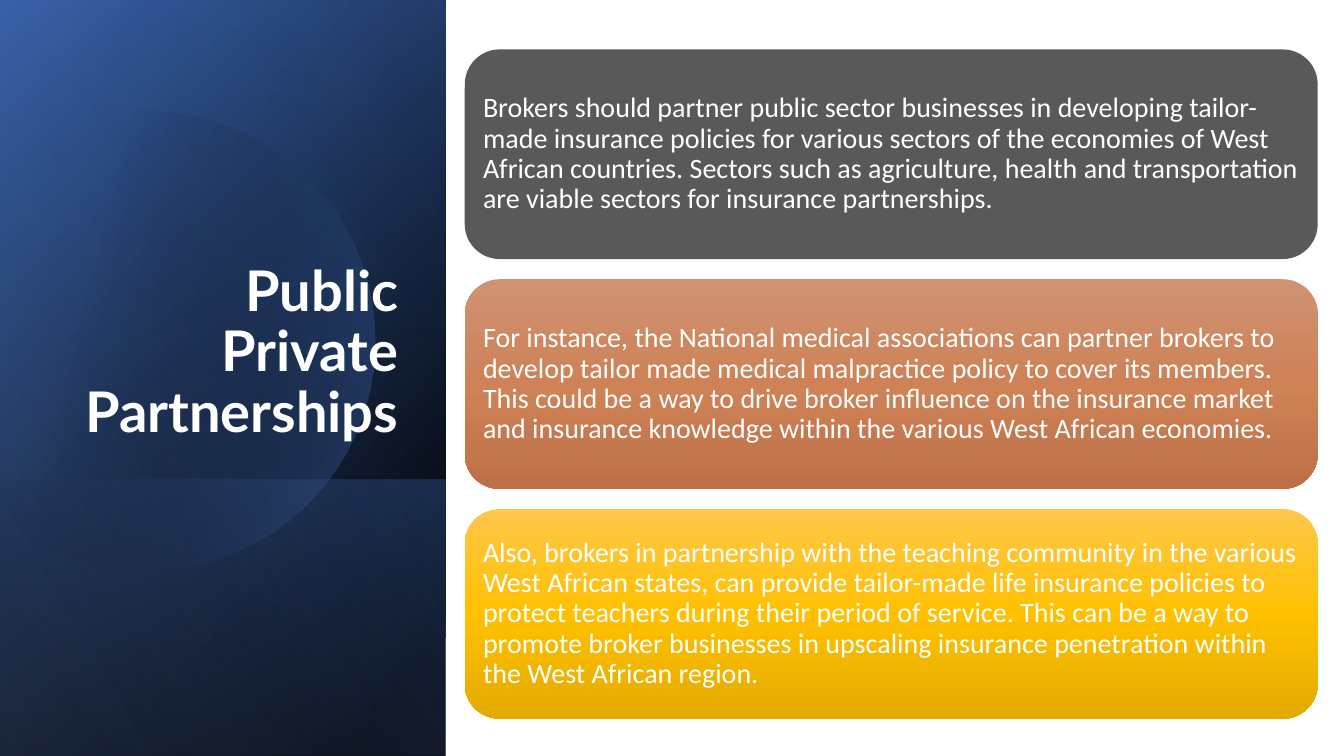
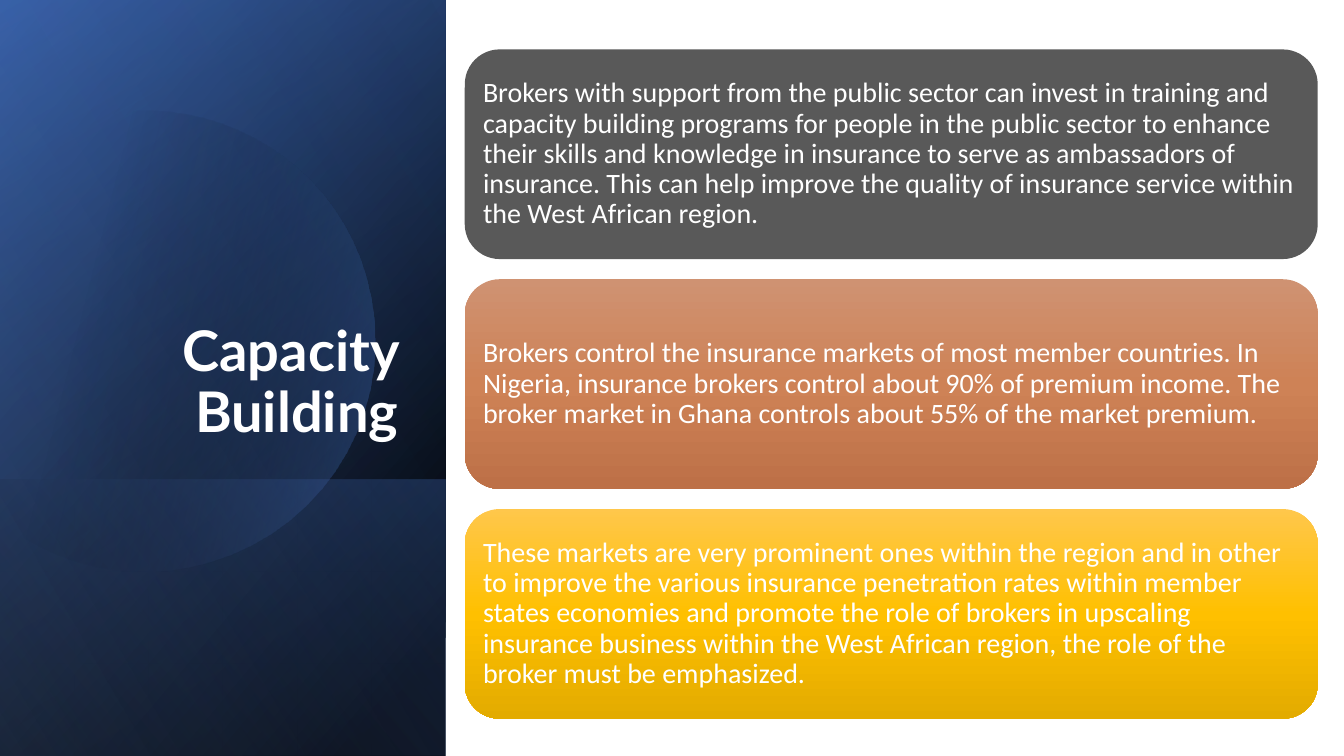
from dataclasses import dataclass

from lxml import etree
from pptx import Presentation
from pptx import util as u
from pptx.dml.color import RGBColor
from pptx.enum import shapes, text
from pptx.oxml import ns

PX = 9144
SLIDE_WIDTH, SLIDE_HEIGHT = 1333, 750
SIDEBAR_WIDTH = 442
WHITE, BLACK, GREY = "FFFFFF", "000000", "595959"
NAVY, BLUE, PALE_BLUE = "2F5597", "4472C4", "8FAADC"

TITLE_BOX = {"left": 64, "top": 184, "width": 341, "height": 262}
TITLE_FONT = {"name": "Lato", "size": u.Pt(40), "bold": True}
TITLE_FRAME = {
    "word_wrap": True,
    "auto_size": text.MSO_AUTO_SIZE.NONE,
    "vertical_anchor": text.MSO_ANCHOR.BOTTOM,
}
TITLE_PARAGRAPH = {
    "alignment": text.PP_ALIGN.RIGHT,
    "line_spacing": 0.9,
    "space_after": u.Pt(8),
}

CARD_LEFT, CARD_TOP, CARD_WIDTH, CARD_HEIGHT, CARD_GAP = 461, 49, 846, 208, 20
CARD_FONT = {"name": "Calibri", "size": u.Pt(20), "bold": False}
CARD_FRAME = {
    "word_wrap": True,
    "vertical_anchor": text.MSO_ANCHOR.MIDDLE,
    **{f"margin_{side}": 8 * PX for side in ("left", "top", "right", "bottom")},
}
CARD_PARAGRAPH = {"alignment": text.PP_ALIGN.LEFT, "line_spacing": 0.9}


@dataclass(frozen=True)
class Stop:
    """A gradient stop, with position and opacity in percent."""

    position: int
    colour: str
    opacity: int = 100


@dataclass(frozen=True)
class Gradient:
    """A linear gradient with a clockwise angle in degrees."""

    angle: int
    stops: tuple[Stop, ...]


@dataclass(frozen=True)
class Panel:
    """A sidebar layer that runs from its top to the slide's bottom edge."""

    top: int
    gradient: Gradient


@dataclass(frozen=True)
class Topic:
    """The wording of one slide."""

    title: str
    cards: tuple[str, ...]


BASE_PANELS = (
    Panel(0, Gradient(50, (Stop(8, BLACK), Stop(100, NAVY)))),
    Panel(0, Gradient(30, (Stop(0, BLACK, 0), Stop(99, BLUE, 46)))),
    Panel(476, Gradient(130, (Stop(2, BLUE, 29), Stop(100, BLACK, 30)))),
)
VEIL = Panel(0, Gradient(120, (Stop(0, BLACK, 0), Stop(99, PALE_BLUE, 11))))
DISC_GRADIENT = Gradient(14, (Stop(29, BLACK, 0), Stop(100, BLUE, 43)))
DISC_START = (149, 110)
DISC_CURVES = (
    ((246, 112), (335, 177), (363, 275)),
    ((398, 397), (328, 523), (207, 558)),
    ((131, 580), (53, 561), (-3, 514)),
    ((-3, 514), (-15, 503), (-15, 503)),
    ((-15, 503), (-15, 175), (-15, 175)),
    ((-15, 175), (0, 161), (0, 161)),
    ((23, 142), (50, 128), (80, 119)),
    ((103, 113), (126, 110), (149, 110)),
)
CARD_FILLS = (
    GREY,
    Gradient(90, (Stop(0, "CF9272"), Stop(50, "CE8256"), Stop(100, "BD7047"))),
    Gradient(90, (Stop(0, "FFC74B"), Stop(50, "FFC000"), Stop(100, "E3AB00"))),
)

TOPICS = (
    Topic(
        "Public Private Partnerships",
        (
            "Brokers should partner public sector businesses in developing "
            "tailor-made insurance policies for various sectors of the economies "
            "of West African countries. Sectors such as agriculture, health and "
            "transportation are viable sectors for insurance partnerships.",
            "For instance, the National medical associations can partner brokers "
            "to develop tailor made medical malpractice policy to cover its "
            "members. This could be a way to drive broker influence on the "
            "insurance market and insurance knowledge within the various West "
            "African economies.",
            "Also, brokers in partnership with the teaching community in the "
            "various West African states, can provide tailor-made life insurance "
            "policies to protect teachers during their period of service. This "
            "can be a way to promote broker businesses in upscaling insurance "
            "penetration within the West African region.",
        ),
    ),
    Topic(
        "Capacity Building",
        (
            "Brokers with support from the public sector can invest in training "
            "and capacity building programs for people in the public sector to "
            "enhance their skills and knowledge in insurance to serve as "
            "ambassadors of insurance. This can help improve the quality of "
            "insurance service within the West African region.",
            "Brokers control the insurance markets of most member countries. In "
            "Nigeria, insurance brokers control about 90% of premium income. The "
            "broker market in Ghana controls about 55% of the market premium.",
            "These markets are very prominent ones within the region and in other "
            "to improve the various insurance penetration rates within member "
            "states economies and promote the role of brokers in upscaling "
            "insurance business within the West African region, the role of the "
            "broker must be emphasized.",
        ),
    ),
)


def apply(target, values: dict) -> None:
    """Set every attribute named in values on the target."""
    for name, value in values.items():
        setattr(target, name, value)


def paint(fill, colour: str) -> None:
    """Make a fill solid in a hex colour."""
    fill.solid()
    fill.fore_color.rgb = RGBColor.from_string(colour)


def paint_gradient(shape, gradient: Gradient) -> None:
    """Fill a shape with a gradient whose stops may be translucent."""
    shape.fill.gradient()
    shape.fill.gradient_angle = 360 - gradient.angle
    stop_list = shape._element.spPr.find(".//" + ns.qn("a:gsLst"))
    for old_stop in list(stop_list):
        stop_list.remove(old_stop)
    for stop in gradient.stops:
        entry = etree.SubElement(stop_list, ns.qn("a:gs"), pos=str(stop.position * 1000))
        colour = etree.SubElement(entry, ns.qn("a:srgbClr"), val=stop.colour)
        if stop.opacity < 100:
            etree.SubElement(colour, ns.qn("a:alpha"), val=str(stop.opacity * 1000))


def finish(shape, fill: str | Gradient) -> None:
    """Fill a shape and remove its outline and shadow."""
    if isinstance(fill, Gradient):
        paint_gradient(shape, fill)
    else:
        paint(shape.fill, fill)
    shape.line.fill.background()
    shape.shadow.inherit = False


def write(shape, wording: str, frame: dict, paragraph_format: dict, font: dict) -> None:
    """Put one formatted white paragraph in a shape."""
    shape.text_frame.text = wording
    apply(shape.text_frame, frame)
    paragraph = shape.text_frame.paragraphs[0]
    apply(paragraph, paragraph_format)
    run = paragraph.runs[0]
    apply(run.font, font)
    paint(run.font.fill, WHITE)


def add_panel(slide, panel: Panel) -> None:
    """Draw a mirrored rectangle turned a quarter so its gradient turns too."""
    height = SLIDE_HEIGHT - panel.top
    shift = (height - SIDEBAR_WIDTH) // 2
    shape = slide.shapes.add_shape(
        shapes.MSO_SHAPE.RECTANGLE,
        -shift * PX, (panel.top + shift) * PX, height * PX, SIDEBAR_WIDTH * PX,
    )
    shape.rotation = 90
    shape._element.spPr.find(ns.qn("a:xfrm")).set("flipH", "1")
    finish(shape, panel.gradient)


def disc_points(steps: int = 16) -> list[tuple[float, float]]:
    """Sample the cubic curves around the disc, in EMU."""
    points, start = [], DISC_START
    for first, second, end in DISC_CURVES:
        for step in range(1, steps + 1):
            t = step / steps
            weights = ((1 - t) ** 3, 3 * t * (1 - t) ** 2, 3 * t * t * (1 - t), t**3)
            corners = (start, first, second, end)
            points.append(tuple(
                PX * sum(weight * corner[axis] for weight, corner in zip(weights, corners))
                for axis in (0, 1)
            ))
        start = end
    return points


def add_disc(slide) -> None:
    """Draw the translucent disc on the sidebar."""
    builder = slide.shapes.build_freeform(DISC_START[0] * PX, DISC_START[1] * PX)
    builder.add_line_segments(disc_points(), close=True)
    finish(builder.convert_to_shape(), DISC_GRADIENT)


def add_sidebar(slide, title: str) -> None:
    """Draw the blue sidebar with the slide title above its layers."""
    for panel in BASE_PANELS:
        add_panel(slide, panel)
    add_disc(slide)
    add_panel(slide, VEIL)
    placeholder = slide.shapes.title
    slide.shapes._spTree.append(placeholder._element)
    apply(placeholder, {name: value * PX for name, value in TITLE_BOX.items()})
    write(placeholder, title, TITLE_FRAME, TITLE_PARAGRAPH, TITLE_FONT)


def add_card(slide, index: int, wording: str) -> None:
    """Draw one rounded card in the column."""
    top = CARD_TOP + index * (CARD_HEIGHT + CARD_GAP)
    shape = slide.shapes.add_shape(
        shapes.MSO_SHAPE.ROUNDED_RECTANGLE,
        CARD_LEFT * PX, top * PX, CARD_WIDTH * PX, CARD_HEIGHT * PX,
    )
    finish(shape, CARD_FILLS[index])
    write(shape, wording, CARD_FRAME, CARD_PARAGRAPH, CARD_FONT)


def main() -> None:
    """Build and save the presentation."""
    presentation = Presentation()
    apply(presentation, {"slide_width": SLIDE_WIDTH * PX, "slide_height": SLIDE_HEIGHT * PX})
    title_only = presentation.slide_layouts.get_by_name("Title Only")
    for topic in TOPICS:
        slide = presentation.slides.add_slide(title_only)
        add_sidebar(slide, topic.title)
        for index, wording in enumerate(topic.cards):
            add_card(slide, index, wording)
    presentation.save("out.pptx")


if __name__ == "__main__":
    main()
